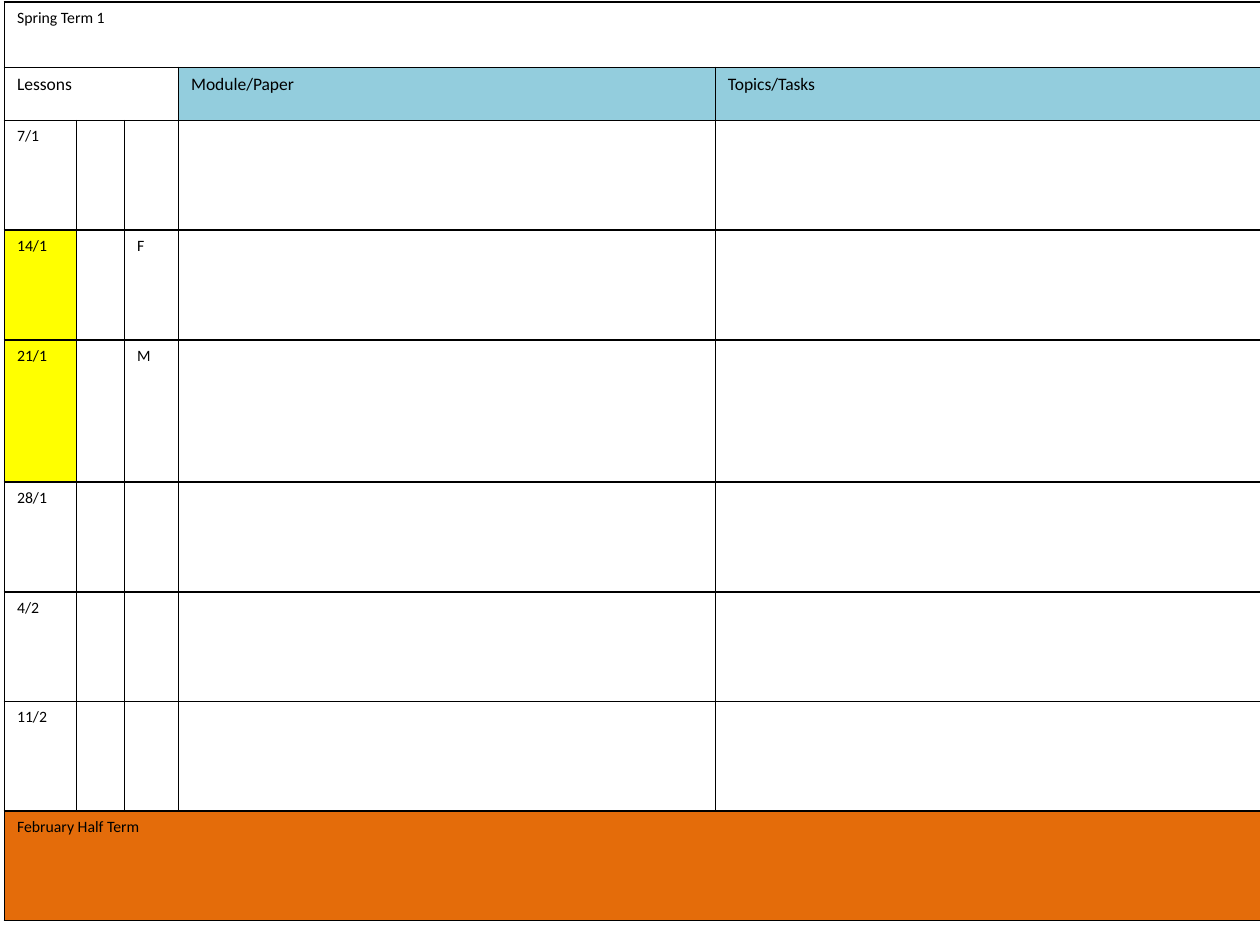
"""Builds a spring term lesson planner slide."""
from dataclasses import dataclass

from lxml import etree
from pptx import Presentation
from pptx.dml.color import RGBColor
from pptx.oxml.ns import qn
from pptx.util import Cm, Pt

COLS = [1.45, 0.97, 1.09, 10.82, 11]
ROW_H = 2.21
TITLE = "Spring Term 1"
HEADINGS = {0: "Lessons", 3: "Module/Paper", 4: "Topics/Tasks"}
WEEKS = [("7/1", ""), ("14/1", "F"), ("21/1", "M"), ("28/1", ""), ("4/2", ""), ("11/2", "")]
MARKED_WEEKS = ("14/1", "21/1")
TALL_WEEK = "21/1"
BREAK = "February Half Term"


@dataclass(frozen=True)
class Theme:
    font: str = "Calibri"
    body: int = 9
    heading: int = 10
    border: int = 1
    ink: str = "000000"
    header: str = "93CDDD"
    marked: str = "FFFF00"
    holiday: str = "E46C0A"


class Planner:
    def __init__(self, s, theme):
        self.s = s
        self.theme = theme

    def table(self, left, top, cols, rows):
        frame = self.s.shapes.add_table(
            len(rows), len(cols), Cm(left), Cm(top), Cm(sum(cols)), Cm(sum(rows)))
        table = frame.table
        table.first_row = table.horz_banding = False
        for col, width in zip(table.columns, cols):
            col.width = Cm(width)
        for row, height in zip(table.rows, rows):
            row.height = Cm(height)
        for cell in table.iter_cells():
            self.borders(cell)
            cell.fill.background()
        return table

    def borders(self, cell):
        tc_pr = cell._tc.get_or_add_tcPr()
        for side in ("a:lnL", "a:lnR", "a:lnT", "a:lnB"):
            ln = etree.SubElement(tc_pr, qn(side), w=str(Pt(self.theme.border)))
            fill = etree.SubElement(ln, qn("a:solidFill"))
            etree.SubElement(fill, qn("a:srgbClr"), val=self.theme.ink)

    def cell(self, cell, text, size=None, fill=None):
        if fill:
            cell.fill.solid()
            cell.fill.fore_color.rgb = RGBColor.from_string(fill)
        cell.text_frame.text = text
        for r in cell.text_frame.paragraphs[0].runs:
            r.font.name = self.theme.font
            r.font.size = Pt(size or self.theme.body)
            r.font.color.rgb = RGBColor.from_string(self.theme.ink)


def main():
    prs = Presentation()
    prs.slide_width, prs.slide_height = Cm(25.4), Cm(19.05)
    theme = Theme()
    planner = Planner(prs.slides.add_slide(prs.slide_layouts[6]), theme)

    week_heights = [2.87 if date == TALL_WEEK else ROW_H for date, _ in WEEKS]
    table = planner.table(0.09, 0.04, COLS, [1.32, 1.07, *week_heights, ROW_H])
    last_row, last_col = len(WEEKS) + 2, len(COLS) - 1
    for row, end in ((0, last_col), (1, 2), (last_row, last_col)):
        table.cell(row, 0).merge(table.cell(row, end))

    planner.cell(table.cell(0, 0), TITLE)
    for col, text in HEADINGS.items():
        planner.cell(table.cell(1, col), text, theme.heading, theme.header if col else None)
    for row, (date, note) in enumerate(WEEKS, 2):
        planner.cell(table.cell(row, 0), date,
                     fill=theme.marked if date in MARKED_WEEKS else None)
        planner.cell(table.cell(row, 2), note)
    planner.cell(table.cell(last_row, 0), BREAK, fill=theme.holiday)

    prs.save("out.pptx")


if __name__ == "__main__":
    main()
